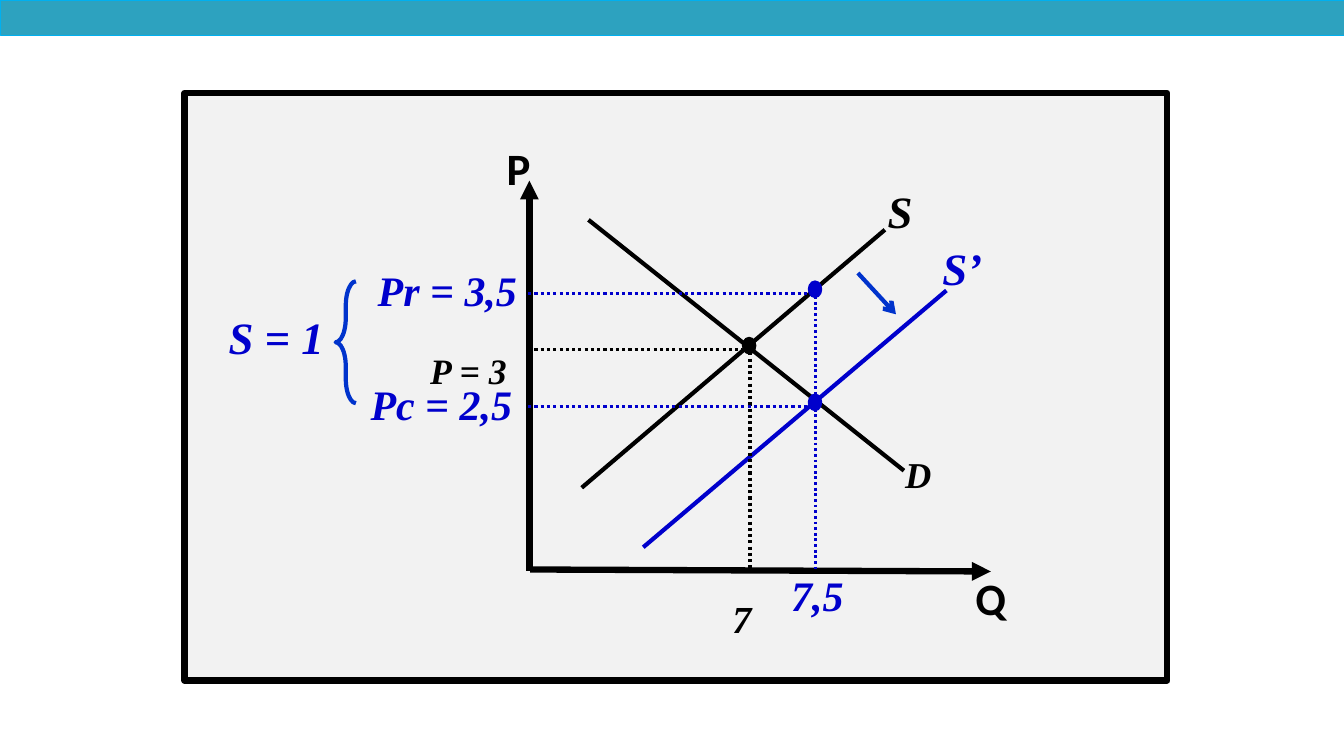
from dataclasses import dataclass

from lxml.etree import SubElement
from pptx import Presentation
from pptx.dml.color import RGBColor
from pptx.enum.dml import MSO_LINE_DASH_STYLE as Dash
from pptx.enum.shapes import MSO_CONNECTOR as Connector, MSO_SHAPE as Shape
from pptx.enum.text import MSO_AUTO_SIZE as AutoSize
from pptx.oxml.ns import qn
from pptx.util import Cm, Pt


@dataclass(frozen=True)
class Theme:
    """Colours, fonts, type sizes and line widths of the slide."""
    band: RGBColor = RGBColor(0x2D, 0xA2, 0xBF)
    band_edge: RGBColor = RGBColor(0x00, 0xB0, 0xF0)
    panel: RGBColor = RGBColor(0xF2, 0xF2, 0xF2)
    before: RGBColor = RGBColor(0, 0, 0)
    after: RGBColor = RGBColor(0x00, 0x00, 0xCC)
    accent: RGBColor = RGBColor(0x00, 0x33, 0xCC)
    axis_font: str = "Calibri"
    label_font: str = "Times New Roman"
    name_size: float = 32
    value_size: float = 30
    demand_size: float = 26
    old_price_size: float = 44
    old_quantity_size: float = 47
    axis_width: float = 4.5
    curve_width: float = 3
    guide_width: float = 2.25
    thin_guide_width: float = 2


THEME = Theme()
PRICE_AXIS_X = 13.34
BASELINE_Y = 14.38
GUIDE_START_X = 13.31


def add_figure(slide, kind, box, edge, width, fill=None):
    """Add a preset shape with an outline and an optional fill."""
    figure = slide.shapes.add_shape(kind, *map(Cm, box))
    figure.shadow.inherit = False
    figure.line.color.rgb = edge
    figure.line.width = Pt(width)
    if fill is None:
        figure.fill.background()
    else:
        figure.fill.solid()
        figure.fill.fore_color.rgb = fill
    return figure


def add_line(slide, start, end, color, width, dash=None, arrow=None):
    """Draw a straight line, dashed or ending in an arrowhead if asked."""
    segment = slide.shapes.add_connector(Connector.STRAIGHT, *map(Cm, (*start, *end)))
    segment.line.color.rgb = color
    segment.line.width = Pt(width)
    if dash:
        segment.line.dash_style = dash
    properties = segment._element.spPr
    if arrow:
        SubElement(properties.find(qn("a:ln")), qn("a:tailEnd"), type=arrow)
    SubElement(properties, qn("a:effectLst"))


def add_guide(slide, start, end, color, width=THEME.guide_width):
    """Draw a dotted guide between a point and an axis."""
    add_line(slide, start, end, color, width, dash=Dash.ROUND_DOT)


def add_label(slide, wording, box, color, size, font=THEME.label_font,
              italic=True, subscript=False):
    """Add a one-line bold label."""
    frame = slide.shapes.add_textbox(*map(Cm, box)).text_frame
    frame.word_wrap = False
    frame.auto_size = AutoSize.SHAPE_TO_FIT_TEXT
    paragraph = frame.paragraphs[0]
    run = paragraph.add_run()
    run.text = wording
    style = run.font if subscript else paragraph.font
    style.name, style.size = font, Pt(size)
    style.bold, style.italic = True, italic
    style.color.rgb = color
    if subscript:
        run._r.get_or_add_rPr().set("baseline", "-25000")


def add_point(slide, center, color):
    """Mark an intersection with an oval dot."""
    width, height = 0.33, 0.41
    box = (center[0] - width / 2, center[1] - height / 2, width, height)
    add_figure(slide, Shape.OVAL, box, color, 1, color)


def draw_background(slide):
    """Draw the top band and the framed panel."""
    add_figure(slide, Shape.RECTANGLE, (0, 0, 33.87, 0.89),
               THEME.band_edge, 0.5, THEME.band)
    add_figure(slide, Shape.RECTANGLE, (4.65, 2.34, 24.77, 14.81),
               THEME.before, 4.33, THEME.panel)


def draw_axes(slide):
    """Draw the price and quantity axes with their names."""
    for start, end in (((PRICE_AXIS_X, BASELINE_Y), (PRICE_AXIS_X, 4.55)),
                       ((13.36, 14.35), (24.97, 14.40))):
        add_line(slide, start, end, THEME.before, THEME.axis_width, arrow="triangle")
    for name, box in (("P", (12.52, 3.43, 1.12, 1.63)),
                      ("Q", (24.33, 14.25, 1.30, 1.63))):
        add_label(slide, name, box, THEME.before, THEME.name_size,
                  THEME.axis_font, italic=False)


def draw_curves(slide):
    """Draw demand and both supply curves with their names."""
    curves = (
        ("S", (14.66, 12.29), (22.30, 5.79), (22.12, 4.50, 1.14, 1.63),
         THEME.before, THEME.name_size),
        ("D", (14.83, 5.54), (22.78, 11.86), (22.56, 11.28, 1.17, 1.37),
         THEME.before, THEME.demand_size),
        ("S’", (16.21, 13.79), (23.85, 7.32), (23.50, 5.94, 1.52, 1.63),
         THEME.after, THEME.name_size),
    )
    for name, start, end, box, color, size in curves:
        add_line(slide, start, end, color, THEME.curve_width)
        add_label(slide, name, box, color, size)
    add_line(slide, (21.62, 6.88), (22.58, 7.92), THEME.accent,
             THEME.curve_width, arrow="arrow")


def draw_old_equilibrium(slide):
    """Mark price and quantity before the subsidy."""
    add_guide(slide, (GUIDE_START_X, 8.81), (18.69, 8.81), THEME.before)
    add_guide(slide, (18.90, 8.56), (18.90, BASELINE_Y), THEME.before)
    add_point(slide, (18.88, 8.71), THEME.before)
    add_label(slide, "P = 3", (10.59, 7.62, 3.02, 1.50), THEME.before,
              THEME.old_price_size, subscript=True)
    add_label(slide, "7", (18.21, 13.77, 1.07, 1.60), THEME.before,
              THEME.old_quantity_size, subscript=True)


def draw_new_equilibrium(slide):
    """Mark both prices, the quantity and the subsidy after the shift."""
    prices = (
        ("Pr = 3,5", 7.39, 20.35, (9.27, 6.53, 4.06, 1.52)),
        ("Pc = 2,5", 10.24, 20.52, (9.09, 9.42, 4.11, 1.52)),
    )
    add_guide(slide, (20.55, 7.32), (20.55, BASELINE_Y), THEME.after,
              THEME.thin_guide_width)
    for price, level, reach, box in prices:
        add_guide(slide, (GUIDE_START_X, level), (reach, level), THEME.after)
        add_point(slide, (20.54, level - 0.1), THEME.after)
        add_label(slide, price, box, THEME.after, THEME.value_size)
    add_label(slide, "7,5", (19.69, 14.22, 1.85, 1.52), THEME.after, THEME.value_size)
    add_label(slide, "S = 1", (5.51, 7.67, 2.92, 1.63), THEME.after, THEME.name_size)
    brace = add_figure(slide, Shape.LEFT_BRACE, (8.46, 7.09, 0.51, 3.07),
                       THEME.accent, THEME.curve_width)
    brace.adjustments[0] = 1.21


def main():
    """Build the subsidy diagram and save it."""
    presentation = Presentation()
    presentation.slide_width, presentation.slide_height = Cm(33.87), Cm(19.05)
    slide = presentation.slides.add_slide(presentation.slide_layouts[6])
    draw_background(slide)
    draw_axes(slide)
    draw_curves(slide)
    draw_old_equilibrium(slide)
    draw_new_equilibrium(slide)
    presentation.save("out.pptx")


if __name__ == "__main__":
    main()
